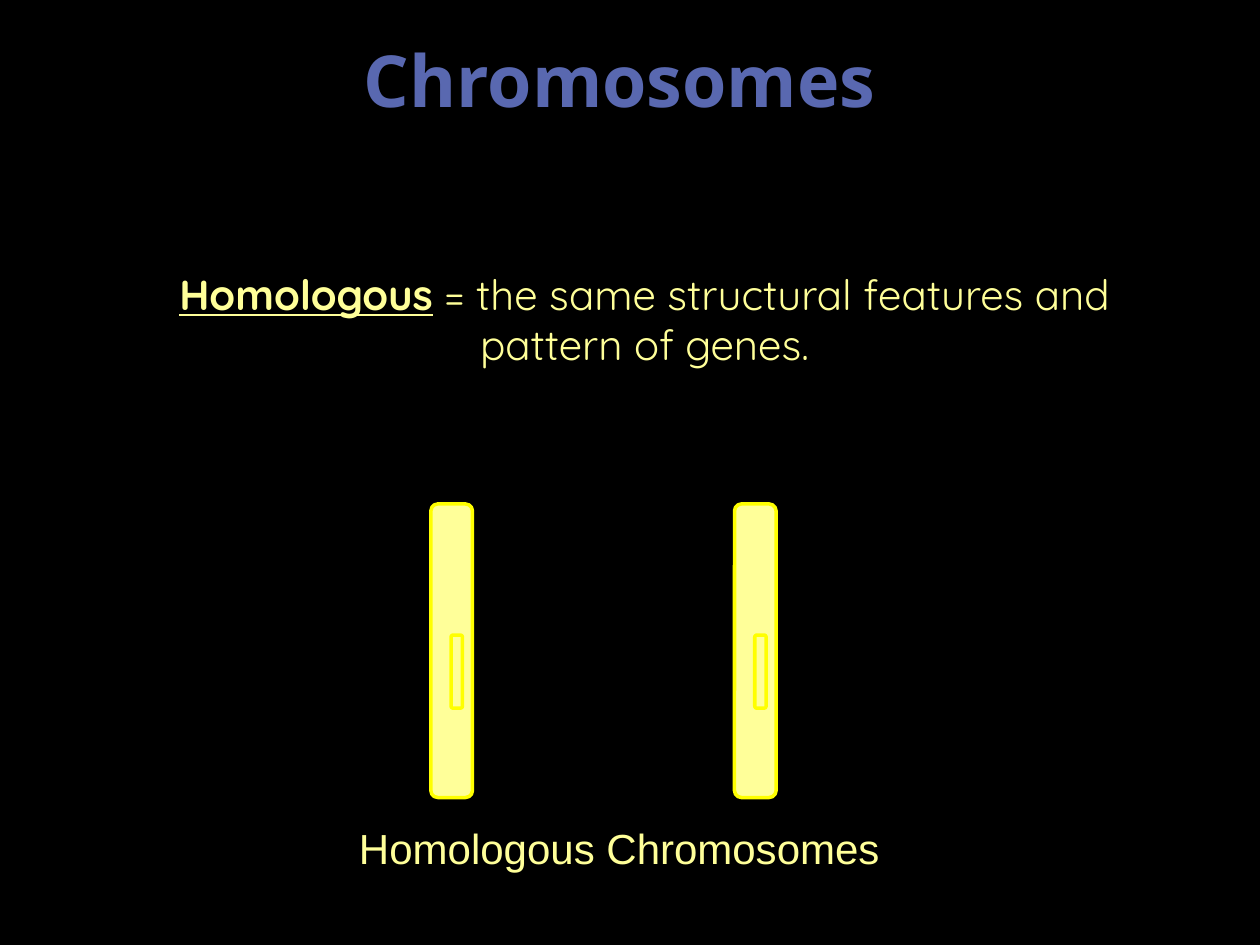
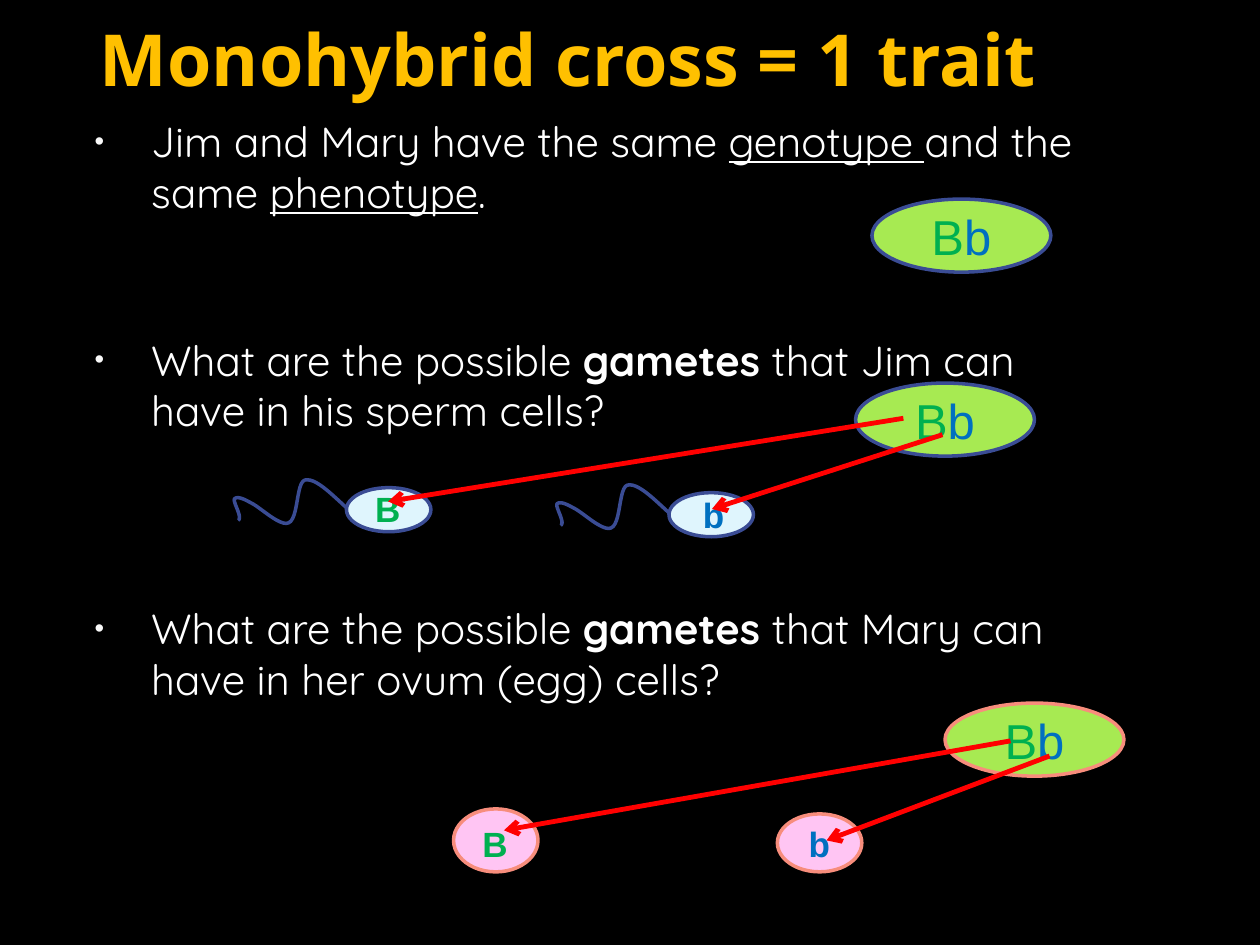
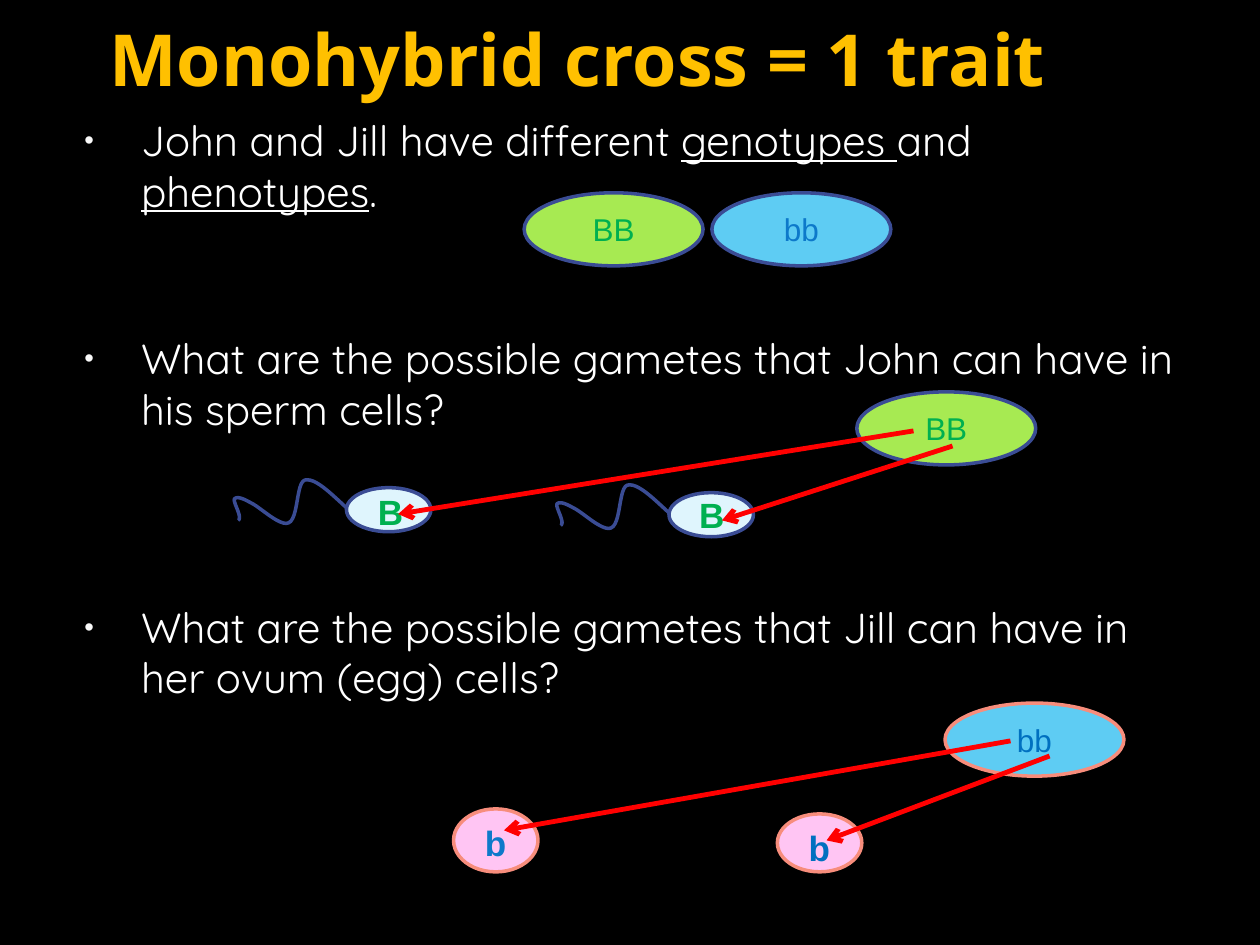
from lxml.etree import SubElement as Sub
from pptx import Presentation
from pptx.dml.color import RGBColor as RGB
from pptx.enum.shapes import MSO_CONNECTOR as Line, MSO_SHAPE as Shape
from pptx.enum.text import MSO_ANCHOR as Anchor, MSO_AUTO_SIZE as Fit, PP_ALIGN as Align
from pptx.oxml.ns import qn
from pptx.util import Inches, Pt

BLACK = RGB(0x00, 0x00, 0x00)
WHITE = RGB(0xFF, 0xFF, 0xFF)
CREAM = RGB(0xFF, 0xFF, 0x99)
YELLOW = RGB(0xFF, 0xFF, 0x00)
INDIGO = RGB(0x59, 0x68, 0xB0)
GOLD = RGB(0xFF, 0xC0, 0x00)
LIME = RGB(0xA7, 0xEA, 0x52)
SKY = RGB(0x5E, 0xCC, 0xF3)
ICE = RGB(0xDF, 0xF5, 0xFD)
PINK = RGB(0xFF, 0xC5, 0xF3)
NAVY = RGB(0x3A, 0x4C, 0x94)
CORAL = RGB(0xF7, 0x8D, 0x7C)
GREEN = RGB(0x00, 0xB0, 0x50)
BLUE = RGB(0x00, 0x70, 0xC0)
AZURE = RGB(0x0D, 0x79, 0xCA)
RED = RGB(0xFF, 0x00, 0x00)

HEAD, BODY, LABEL = "Noto Sans", "Quicksand", "Arial"
CELL = (1.42, 0.58)
GAPS = (0, 67, 96)

SPERM = [(2.75, 3.87), (5.31, 3.91)]
EGGS = [(3.6, 6.42, 0.67, 0.5), (6.17, 6.46, 0.67, 0.46)]
DROPS = [(8.02, 5.88, 4, 6.59), (8.33, 6, 6.56, 6.67)]
TAIL = [(0, 0.16), (-0.13, 0.04), (-0.25, -0.08), (-0.33, -0.06),
        (-0.4, -0.04), (-0.38, 0.25), (-0.46, 0.28),
        (-0.53, 0.31), (-0.69, 0.15), (-0.76, 0.12),
        (-0.83, 0.08), (-0.87, 0.07), (-0.89, 0.09),
        (-0.9, 0.12), (-0.82, 0.24), (-0.86, 0.26)]

DEFINE = [("Homologous", "bu"), (" = the same structural features and pattern of genes.", "")]
BIG_B, BIG_b = ("B", GREEN), ("b", BLUE)

CROSSES = [
    dict(
        title="Monohybrid cross = 1 trait ",
        body=(0.5, 0.87, 8.17, 4.95),
        list=[
            [("Jim and Mary have the same ", ""), ("genotype ", "u"), ("and the same ", ""),
             ("phenotype", "u"), (".", "")],
            [("What are the possible ", ""), ("gametes", "b"),
             (" that Jim can have in his sperm cells?", "")],
            [("What are the possible ", ""), ("gametes ", "b"),
             ("that Mary can have in her ovum (egg) cells?", "")],
        ],
        size=28,
        cells=[(7.5, 5.58, LIME, CORAL, [BIG_B, BIG_b]),
               (6.79, 3.04, LIME, NAVY, [BIG_B, BIG_b]),
               (6.92, 1.58, LIME, NAVY, [BIG_B, BIG_b])],
        tags=[(2.88, 3.82, BIG_B), (5.48, 3.87, BIG_b),
              (3.73, 6.48, BIG_B), (6.32, 6.48, BIG_b)],
        rays=[(7.17, 3.32, 3.08, 3.98), (7.48, 3.45, 5.65, 4.04)],
    ),
    dict(
        title="Monohybrid cross = 1 trait",
        body=(0.42, 0.86, 9.17, 4.95),
        list=[
            [("John and Jill have different ", ""), ("genotypes ", "u"), ("and ", ""),
             ("phenotypes", "u"), (".", "")],
            [("What are the possible gametes that John can have in his sperm cells?", "")],
            [("What are the possible gametes that Jill can have in her ovum (egg) cells?", "")],
        ],
        size=18,
        cells=[(7.5, 5.58, SKY, CORAL, [("bb", BLUE)]),
               (6.8, 3.11, LIME, NAVY, [("BB", GREEN)]),
               (4.16, 1.53, LIME, NAVY, [("BB", GREEN)]),
               (5.65, 1.53, SKY, NAVY, [("bb", AZURE)])],
        tags=[(2.9, 3.84, BIG_B), (5.45, 3.87, BIG_B),
              (3.75, 6.47, ("b", AZURE)), (6.32, 6.51, BIG_b)],
        rays=[(7.25, 3.42, 3.16, 4.08), (7.56, 3.54, 5.73, 4.13)],
    ),
]


def inch(box):
    return [Inches(v) for v in box]


def add_run(para, text, font, size, color, marks=""):
    run = para.add_run()
    run.text = text
    run.font.name, run.font.size = font, Pt(size)
    run.font.color.rgb = color
    run.font.bold, run.font.underline = "b" in marks, "u" in marks


def place(shape, box):
    shape.left, shape.top, shape.width, shape.height = inch(box)


def start(deck, title, box, color):
    slide = deck.slides.add_slide(deck.slide_layouts[1])
    head, body = slide.placeholders
    place(head, box)
    frame = head.text_frame
    frame.auto_size, frame.vertical_anchor = Fit.NONE, Anchor.MIDDLE
    para = frame.paragraphs[0]
    para.alignment = Align.CENTER
    add_run(para, title, HEAD, 41, color, "b")
    body.text_frame.auto_size = Fit.NONE
    return slide, body


def indent(para, left, hang, dot):
    props = para._p.get_or_add_pPr()
    props.set("marL", str(Inches(left)))
    props.set("indent", str(Inches(hang)))
    if not dot:
        Sub(props, qn("a:buNone"))
        return
    tint = Sub(props, qn("a:buClr"))
    Sub(tint, qn("a:srgbClr"), val="F9F9F9")
    Sub(props, qn("a:buSzPct"), val="65000")
    Sub(props, qn("a:buFont"), typeface=LABEL)
    Sub(props, qn("a:buChar"), char="•")


def style(shape, fill, rim):
    shape.shadow.inherit = False
    if fill is None:
        shape.fill.background()
    else:
        shape.fill.solid()
        shape.fill.fore_color.rgb = fill
    shape.line.color.rgb, shape.line.width = rim, Pt(2)


def draw(slide, kind, box, fill, rim):
    shape = slide.shapes.add_shape(kind, *inch(box))
    style(shape, fill, rim)
    return shape


def add_cell(slide, x, y, fill, rim, genes, size):
    frame = draw(slide, Shape.OVAL, (x, y, *CELL), fill, rim).text_frame
    frame.vertical_anchor = Anchor.MIDDLE
    para = frame.paragraphs[0]
    para.alignment = Align.CENTER
    for text, color in genes:
        add_run(para, text, LABEL, size, color)


def curve(knots, steps=12):
    points = [knots[0]]
    for i in range(0, len(knots) - 1, 3):
        for n in range(1, steps + 1):
            t = n / steps
            mix = ((1 - t) ** 3, 3 * t * (1 - t) ** 2, 3 * t * t * (1 - t), t ** 3)
            points.append(tuple(sum(m * k[a] for m, k in zip(mix, knots[i:i + 4]))
                                for a in (0, 1)))
    return points


def add_sperm(slide, x, y):
    draw(slide, Shape.OVAL, (x, y, 0.67, 0.35), ICE, NAVY)
    points = [inch(point) for point in curve([(x + a, y + b) for a, b in TAIL])]
    tail = slide.shapes.build_freeform(*points[0])
    tail.add_line_segments(points[1:], close=False)
    style(tail.convert_to_shape(), None, NAVY)


def add_tag(slide, x, y, gene):
    frame = slide.shapes.add_textbox(*inch((x, y, 0.4, 0.44))).text_frame
    frame.word_wrap = False
    add_run(frame.paragraphs[0], gene[0], LABEL, 20, gene[1], "b")


def add_ray(slide, ends):
    ray = slide.shapes.add_connector(Line.STRAIGHT, *inch(ends))
    ray.line.color.rgb, ray.line.width = RED, Pt(2.75)
    Sub(ray.line._get_or_add_ln(), qn("a:tailEnd"), type="arrow")
    Sub(ray._element.spPr, qn("a:effectLst"))


def add_pair(deck):
    slide, body = start(deck, "Chromosomes", (0.42, 0, 9, 1.25), INDIGO)
    place(body, (0.83, 2.08, 8.42, 4.95))
    para = body.text_frame.paragraphs[0]
    indent(para, 0.15, 0, False)
    para.alignment, para.space_before = Align.CENTER, Pt(0)
    for text, marks in DEFINE:
        add_run(para, text, BODY, 24, CREAM, marks)
    for x in (3.42, 5.83):
        for box in ((x, 4, 0.33, 2.33), (x + 0.16, 5.04, 0.09, 0.58)):
            draw(slide, Shape.ROUNDED_RECTANGLE, box, CREAM, YELLOW)
    frame = slide.shapes.add_textbox(*inch((1.58, 6.48, 6.67, 0.91))).text_frame
    frame.word_wrap = True
    para = frame.paragraphs[0]
    para.alignment = Align.CENTER
    add_run(para, "Homologous Chromosomes", LABEL, 24, CREAM)


def add_cross(deck, cross):
    slide, body = start(deck, cross["title"], (0.5, -0.17, 8.17, 1.25), GOLD)
    place(body, cross["body"])
    frame = body.text_frame
    for i, (item, gap) in enumerate(zip(cross["list"], GAPS)):
        para = frame.add_paragraph() if i else frame.paragraphs[0]
        indent(para, 0.6, -0.45, True)
        para.space_before = Pt(gap)
        for text, marks in item:
            add_run(para, text, BODY, 24, WHITE, marks)
    for cell in cross["cells"]:
        add_cell(slide, *cell, cross["size"])
    for spot in SPERM:
        add_sperm(slide, *spot)
    for box in EGGS:
        draw(slide, Shape.OVAL, box, PINK, CORAL)
    for tag in cross["tags"]:
        add_tag(slide, *tag)
    for ends in cross["rays"] + DROPS:
        add_ray(slide, ends)


def main():
    deck = Presentation()
    deck.slide_width, deck.slide_height = Inches(10), Inches(7.5)
    back = deck.slide_master.background.fill
    back.solid()
    back.fore_color.rgb = BLACK
    add_pair(deck)
    for cross in CROSSES:
        add_cross(deck, cross)
    deck.save("out.pptx")


if __name__ == "__main__":
    main()
